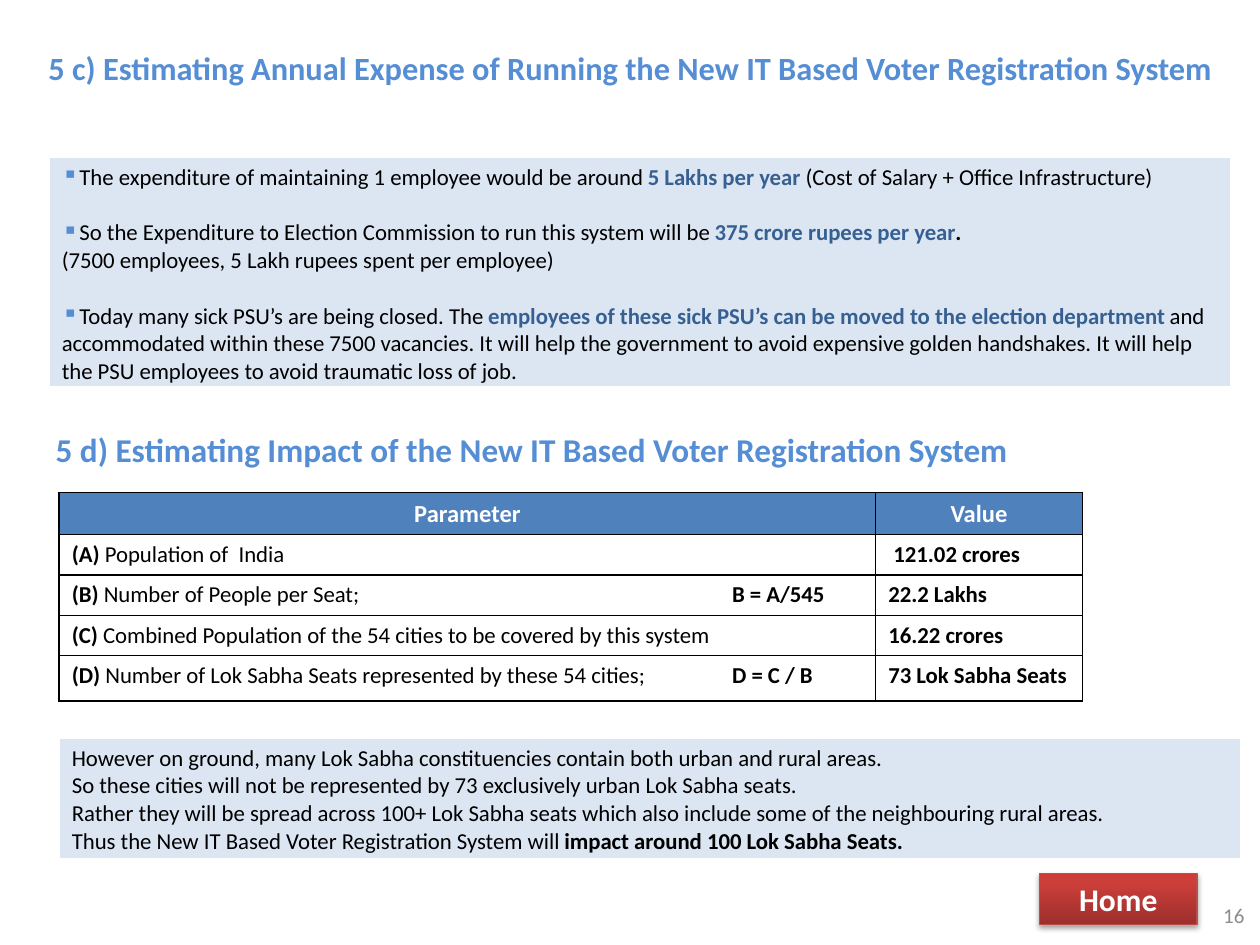
from lxml import etree
from pptx import Presentation
from pptx.dml.color import RGBColor
from pptx.enum.shapes import MSO_SHAPE
from pptx.enum.text import MSO_ANCHOR, PP_ALIGN
from pptx.oxml import parse_xml
from pptx.oxml.ns import nsdecls, qn
from pptx.util import Emu, Inches, Pt

CENTER, LEFT = PP_ALIGN.CENTER, PP_ALIGN.LEFT
MIDDLE, TOP = MSO_ANCHOR.MIDDLE, MSO_ANCHOR.TOP
RECTANGLE = MSO_SHAPE.RECTANGLE
FONT = "Calibri"
BODY, BLANK_LINE = 13, 15.87
BULLET_TAB, FORMULA_TAB = 0.14, 5.24
COLORS = {
    "heading": "558ED5", "accent": "376092", "text": "000000", "white": "FFFFFF",
    "panel": "DCE6F2", "header": "4F81BD", "number": "8C8C8C", "button_edge": "BF4C48",
}
BUTTON_STOPS = [(0, "9C2F2D"), (80, "CB3E3A"), (100, "CE3B37")]

# A run is (text, style); styles are listed in STYLES as (colour, bold).
STYLES = {"plain": ("text", False), "bold": ("text", True), "accent": ("accent", True)}

HEADINGS = [
    ("5 c) Estimating Annual Expense of Running the New IT Based Voter Registration System",
     (0.25, 0.33, 9.5, 0.41), 18.5),
    ("5 d) Estimating Impact of the New IT Based Voter Registration System",
     (0.08, 3.36, 8.28, 0.42), 19),
]
# Each paragraph is (bulleted, followed by a gap, runs).
EXPENSES = [
    (True, True, [
        ("The expenditure of maintaining 1 employee would be around ", "plain"),
        ("5 Lakhs per year ", "accent"),
        ("(Cost of Salary + Office Infrastructure)", "plain")]),
    (True, False, [
        ("So the Expenditure to Election Commission to run this system will be ", "plain"),
        ("375 crore rupees per year", "accent"), (".", "bold")]),
    (False, True, [("(7500 employees, 5 Lakh rupees spent per employee)", "plain")]),
    (True, False, [
        ("Today many sick PSU’s are being closed. The ", "plain"),
        ("employees of these sick PSU’s can be moved to the election department ", "accent"),
        ("and accommodated within these 7500 vacancies. It will help the government to avoid "
         "expensive golden handshakes. It will help the PSU employees to avoid traumatic loss "
         "of job.", "plain")]),
]
CONCLUSION = [
    (False, False, [("However on ground, many Lok Sabha constituencies contain both urban "
                     "and rural areas.", "plain")]),
    (False, False, [("So these cities will not be represented by 73 exclusively urban "
                     "Lok Sabha seats.", "plain")]),
    (False, False, [("Rather they will be spread across 100+ Lok Sabha seats which also include "
                     "some of the neighbouring rural areas.", "plain")]),
    (False, False, [("Thus the New IT Based Voter Registration System will ", "plain"),
                    ("impact around 100 Lok Sabha Seats.", "bold")]),
]
PANELS = [(EXPENSES, (0.39, 1.25, 9.38, 1.83)), (CONCLUSION, (0.47, 5.86, 9.38, 0.97))]

IMPACT_HEADER = ("Parameter", "Value")
# (label, parameter, formula, value)
IMPACT = [
    ("(A) ", "Population of  India", "", " 121.02 crores"),
    ("(B) ", "Number of People per Seat;", "B = A/545", "22.2 Lakhs"),
    ("(C) ", "Combined Population of the 54 cities to be covered by this system", "",
     "16.22 crores"),
    ("(D) ", "Number of Lok Sabha Seats represented by these 54 cities;", "D = C / B",
     "73 Lok Sabha Seats"),
]
IMPACT_BOX = (0.47, 3.91, 8.12, 1.65)
IMPACT_COLUMNS = (6.48, 1.64)
IMPACT_ROWS = (0.33, 0.32, 0.32, 0.32, 0.36)


def rgb(name):
    return RGBColor.from_string(COLORS[name])


def add_run(paragraph, text, size, color, bold=False):
    run = paragraph.add_run()
    run.text = text
    run.font.name, run.font.size, run.font.bold = FONT, Pt(size), bold
    run.font.color.rgb = rgb(color)


def add_styled_runs(paragraph, runs):
    for text, style in runs:
        add_run(paragraph, text, BODY, *STYLES[style])


def add_tab_stop(paragraph, position):
    tabs = etree.SubElement(paragraph._p.get_or_add_pPr(), qn("a:tabLst"))
    etree.SubElement(tabs, qn("a:tab"), pos=str(Inches(position)), algn="l")


def add_bullet(paragraph):
    properties = paragraph._p.get_or_add_pPr()
    properties.set("marL", "0")
    properties.set("indent", "0")
    color = etree.SubElement(properties, qn("a:buClr"))
    etree.SubElement(color, qn("a:srgbClr"), val=COLORS["heading"])
    etree.SubElement(properties, qn("a:buChar"), char="▪")
    add_tab_stop(paragraph, BULLET_TAB)


def set_cell(cell, fill, border, bottom_width=1):
    """Draw the four borders, then the fill, in the order the schema asks for."""
    properties = cell._tc.get_or_add_tcPr()
    for side in "LRTB":
        width = bottom_width if side == "B" else 1
        properties.append(parse_xml(
            f'<a:ln{side} {nsdecls("a")} w="{Pt(width)}"><a:solidFill>'
            f'<a:srgbClr val="{COLORS[border]}"/></a:solidFill></a:ln{side}>'))
    cell.fill.solid()
    cell.fill.fore_color.rgb = rgb(fill)


def add_table(slide, box, columns, rows):
    frame = slide.shapes.add_table(len(rows), len(columns), *map(Inches, box))
    table = frame.table
    for column, width in zip(table.columns, columns):
        column.width = Inches(width)
    for row, height in zip(table.rows, rows):
        row.height = Inches(height)
    return table


def add_panel(slide, paragraphs, box):
    cell = add_table(slide, box, box[2:3], box[3:]).cell(0, 0)
    cell.margin_bottom = Emu(0)
    set_cell(cell, "panel", "white", 3)
    frame = cell.text_frame
    for index, (bulleted, gap, runs) in enumerate(paragraphs):
        paragraph = frame.add_paragraph() if index else frame.paragraphs[0]
        if gap:
            paragraph.space_after = Pt(BLANK_LINE)
        if bulleted:
            add_bullet(paragraph)
            add_run(paragraph, "\t", BODY, "text")
        add_styled_runs(paragraph, runs)


def add_impact_table(slide):
    table = add_table(slide, IMPACT_BOX, IMPACT_COLUMNS, IMPACT_ROWS)
    for column, title in enumerate(IMPACT_HEADER):
        cell = table.cell(0, column)
        set_cell(cell, "header", "text")
        paragraph = cell.text_frame.paragraphs[0]
        paragraph.alignment = CENTER
        add_run(paragraph, title, 14, "white", True)
    for row, (label, parameter, formula, value) in enumerate(IMPACT, 1):
        parameter_runs = [(label, "bold"), (parameter, "plain")]
        if formula:
            parameter_runs.append(("\t" + formula, "bold"))
        for column, runs in enumerate((parameter_runs, [(value, "bold")])):
            cell = table.cell(row, column)
            set_cell(cell, "white", "text")
            paragraph = cell.text_frame.paragraphs[0]
            if len(runs) == 3:
                add_tab_stop(paragraph, FORMULA_TAB)
            add_styled_runs(paragraph, runs)


def add_text(slide, text, box, size, color, bold=False, align=CENTER, anchor=TOP):
    frame = slide.shapes.add_textbox(*map(Inches, box)).text_frame
    frame.word_wrap, frame.vertical_anchor = True, anchor
    frame.paragraphs[0].alignment = align
    add_run(frame.paragraphs[0], text, size, color, bold)


def add_home_button(slide):
    button = slide.shapes.add_shape(RECTANGLE, *map(Inches, (8.25, 6.93, 1.25, 0.41)))
    button.line.color.rgb, button.line.width = rgb("button_edge"), Pt(0.75)
    button.fill.gradient()
    button.fill.gradient_angle = 90
    stops = button._element.spPr.find(".//" + qn("a:gsLst"))
    stops[:] = [parse_xml(f'<a:gs {nsdecls("a")} pos="{share * 1000}">'
                          f'<a:srgbClr val="{color}"/></a:gs>')
                for share, color in BUTTON_STOPS]
    button._element.spPr.append(parse_xml(
        f'<a:effectLst {nsdecls("a")}><a:outerShdw blurRad="{Pt(3.1)}" dist="{Pt(1.8)}" '
        'dir="5400000" rotWithShape="0"><a:srgbClr val="000000"><a:alpha val="35000"/>'
        '</a:srgbClr></a:outerShdw></a:effectLst>'))
    paragraph = button.text_frame.paragraphs[0]
    paragraph.alignment = CENTER
    add_run(paragraph, "Home", 18, "white", True)


def main():
    deck = Presentation()
    deck.slide_width, deck.slide_height = Inches(10), Inches(7.5)
    slide = deck.slides.add_slide(deck.slide_layouts[6])
    for text, box, size in HEADINGS:
        add_text(slide, text, box, size, "heading", True)
    for paragraphs, box in PANELS:
        add_panel(slide, paragraphs, box)
    add_impact_table(slide)
    add_home_button(slide)
    add_text(slide, "16", (9.61, 7.03, 0.39, 0.47), 12, "number", align=LEFT, anchor=MIDDLE)
    deck.save("out.pptx")


if __name__ == "__main__":
    main()
